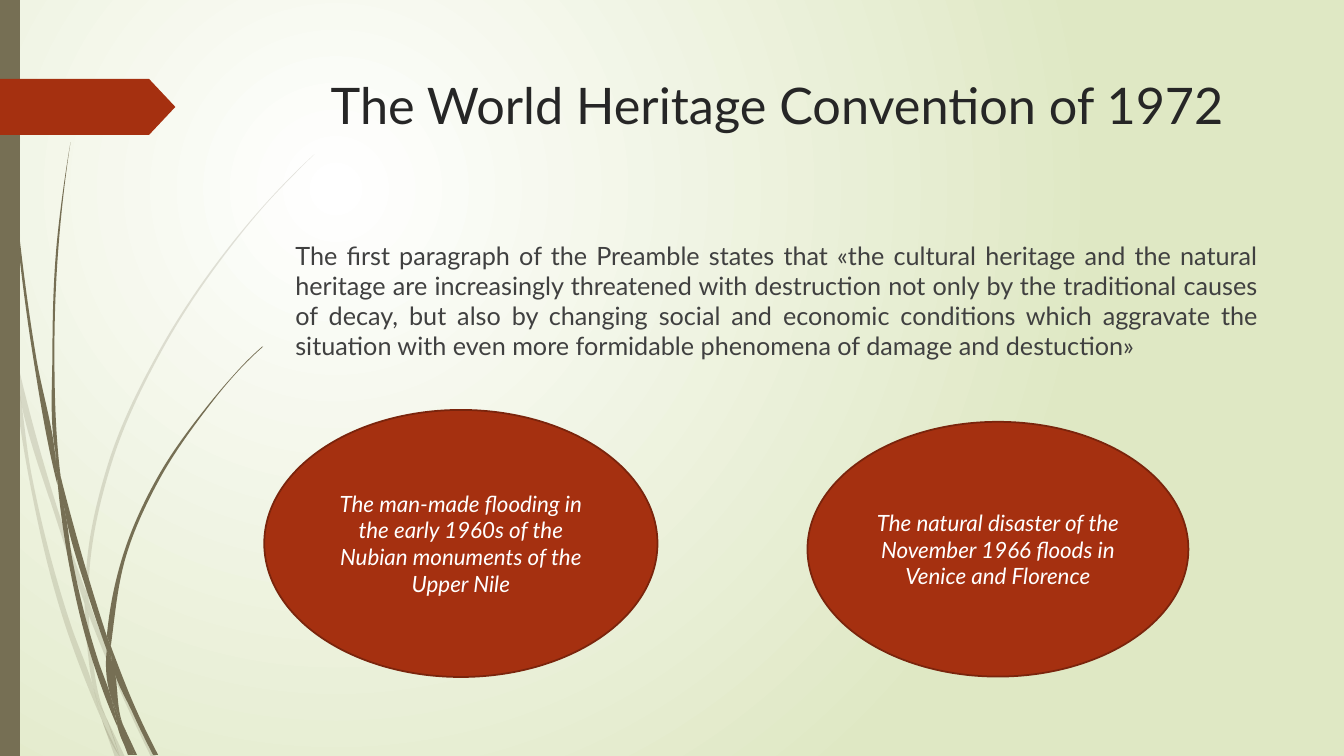
from dataclasses import dataclass
from itertools import pairwise

from lxml.etree import SubElement
from pptx import Presentation
from pptx.dml.color import RGBColor
from pptx.enum.shapes import MSO_SHAPE
from pptx.enum.text import MSO_ANCHOR, MSO_AUTO_SIZE, PP_ALIGN
from pptx.oxml.ns import qn
from pptx.shapes.autoshape import Shape
from pptx.slide import Slide
from pptx.util import Cm, Pt

WHITE = RGBColor(0xFF, 0xFF, 0xFF)
PALE_GREEN = RGBColor(0xDF, 0xE8, 0xC4)
OLIVE = RGBColor(0x76, 0x6F, 0x54)
RUST = RGBColor(0xA5, 0x30, 0x10)
DARK_RUST = RGBColor(0x7A, 0x24, 0x0C)
TITLE_GREY = RGBColor(0x26, 0x26, 0x26)
BODY_GREY = RGBColor(0x40, 0x40, 0x40)
FONT = "Lato"
GRID = Cm(2.54) / 100  # one unit of the blade coordinates

Edge = list[tuple[int, int]]


@dataclass
class Blade:
    """A piece of grass: its left and right edges, both from tip to root."""
    left: Edge
    right: Edge


@dataclass
class Threat:
    text: str
    left: float
    top: float
    width: float
    height: float


FAINT_GRASS = [
    Blade([(0, 299), (10, 344), (11, 350)], [(0, 282), (9, 322), (11, 350)]),
    Blade([(14, 345), (17, 376), (58, 522), (84, 599)], [(14, 345), (62, 520), (85, 586)]),
    Blade([(88, 610), (123, 694), (150, 751)], [(88, 596), (92, 607), (127, 692), (155, 751)]),
    Blade([(105, 711), (119, 751)], [(105, 711), (124, 751)]),
    Blade([(11, 350), (28, 470), (65, 621), (92, 693), (101, 714)],
          [(11, 350), (17, 376), (31, 469), (70, 619), (93, 683), (99, 707), (101, 714)]),
    Blade([(84, 599), (87, 646), (93, 683), (96, 692), (105, 711)],
          [(88, 610), (91, 646), (103, 706), (105, 711)]),
    Blade([(312, 153), (289, 175), (268, 197), (228, 244), (158, 348), (107, 461), (85, 584),
           (85, 586)],
          [(312, 153), (290, 175), (268, 198), (229, 245), (160, 349), (110, 462), (88, 584),
           (88, 596)]),
    Blade([(101, 714), (114, 751)], [(101, 714), (119, 751)]),
    Blade([(85, 586), (84, 599)], [(88, 596), (88, 610)]),
    Blade([(93, 683), (99, 707), (101, 714), (119, 751)],
          [(93, 683), (96, 692), (105, 711), (119, 751)]),
]

DARK_GRASS = [
    Blade([(3, 0), (4, 48), (7, 110), (17, 233), (33, 355), (56, 477), (57, 481)],
          [(4, 0), (5, 48), (8, 109), (19, 232), (36, 355), (55, 453), (57, 481)]),
    Blade([(60, 472), (64, 505), (88, 592), (106, 645)], [(60, 472), (93, 590), (106, 631)]),
    Blade([(110, 641), (111, 656), (132, 708), (152, 749)],
          [(110, 641), (113, 649), (136, 706), (157, 749)]),
    Blade([(57, 477), (68, 557), (93, 659), (111, 708), (117, 722)],
          [(57, 477), (64, 505), (72, 556), (98, 657), (110, 691), (116, 717), (117, 722)]),
    Blade([(70, 141), (62, 193), (56, 245), (52, 349), (55, 449), (60, 472)],
          [(70, 141), (63, 193), (58, 245), (54, 349), (58, 453), (60, 472)]),
    Blade([(122, 719), (133, 749)], [(122, 719), (136, 749)]),
    Blade([(55, 449), (55, 453), (57, 477), (64, 505)], [(55, 449), (60, 472), (64, 505)]),
    Blade([(260, 344), (245, 358), (231, 373), (204, 405), (156, 474), (122, 551), (106, 631)],
          [(261, 344), (245, 359), (231, 374), (205, 406), (158, 476), (125, 552), (111, 633),
           (110, 641)]),
    Blade([(117, 722), (127, 749)], [(117, 722), (131, 749)]),
    Blade([(106, 645), (110, 691), (116, 706), (122, 719)],
          [(106, 645), (109, 651), (111, 656), (121, 716), (122, 719)]),
    Blade([(106, 631), (106, 645)], [(110, 641), (111, 656)]),
    Blade([(110, 691), (116, 717), (117, 722), (130, 749)],
          [(110, 691), (116, 706), (122, 719), (133, 749)]),
]

THREATS = [
    Threat("The man-made flooding in the early 1960s of the Nubian monuments of the Upper Nile",
           6.66, 10.33, 9.91, 6.73),
    Threat("The natural disaster of the November 1966 floods in Venice and Florence",
           20.35, 10.63, 9.6, 6.42),
]


def bezier_segments(edge: Edge) -> list[tuple[complex, complex, complex]]:
    """Two control points and an end point for each step of a smooth curve along the edge."""
    knots = [complex(*point) for point in edge]
    chords = [abs(b - a) for a, b in pairwise(knots)]
    slopes = [(b - a) / abs(b - a) for a, b in pairwise(knots)]
    inner = [(s * d + t * c) / (c + d)
             for (s, t), (c, d) in zip(pairwise(slopes), pairwise(chords))]
    tangents = slopes * 2
    if inner:
        tangents = [2 * slopes[0] - inner[0], *inner, 2 * slopes[-1] - inner[-1]]
    return [(a + s * chord / 3, b - t * chord / 3, b)
            for (a, b), (s, t), chord in zip(pairwise(knots), pairwise(tangents), chords)]


def paint(shape: Shape, color: RGBColor) -> None:
    shape.shadow.inherit = False
    shape.fill.solid()
    shape.fill.fore_color.rgb = color
    shape.line.fill.background()


def write(shape: Shape, text: str, size: int, color: RGBColor, align: PP_ALIGN,
          anchor: MSO_ANCHOR = MSO_ANCHOR.TOP, italic: bool = False) -> None:
    frame = shape.text_frame
    frame.text = text
    frame.word_wrap = True
    frame.auto_size = MSO_AUTO_SIZE.NONE
    frame.vertical_anchor = anchor
    paragraph = frame.paragraphs[0]
    paragraph.alignment = align
    paragraph.space_before = Pt(0)
    properties = paragraph._p.get_or_add_pPr()
    properties.set("marL", "0")
    properties.set("indent", "0")
    SubElement(properties, qn("a:buNone"))
    font = paragraph.runs[0].font
    font.name, font.size, font.italic = FONT, Pt(size), italic
    font.color.rgb = color


def place(shape: Shape, left: float, top: float, width: float, height: float) -> None:
    shape.left, shape.top, shape.width, shape.height = map(Cm, (left, top, width, height))


def paint_background(slide: Slide) -> None:
    fill = slide.background.fill
    fill.gradient()
    for stop, position, color in zip(fill.gradient_stops, (0, 1), (WHITE, PALE_GREEN)):
        stop.position = position
        stop.color.rgb = color
    gradient = slide.element.find(".//" + qn("a:gradFill"))
    gradient.remove(gradient.find(qn("a:lin")))
    circle = SubElement(gradient, qn("a:path"), {"path": "circle"})
    SubElement(circle, qn("a:fillToRect"), l="50000", t="50000", r="100000", b="100000")


def draw_blade(slide: Slide, blade: Blade, opacity: int) -> None:
    """Draw the outline with straight sides, then bend the sides along both edges."""
    back = blade.right[::-1]
    outline = [(x * GRID, y * GRID) for x, y in blade.left + back]
    builder = slide.shapes.build_freeform(*outline[0])
    builder.add_line_segments(outline[1:], close=True)
    grass = builder.convert_to_shape()
    paint(grass, OLIVE)
    if opacity < 100:
        color = grass.element.spPr.find(qn("a:solidFill"))[0]
        SubElement(color, qn("a:alpha"), val=str(opacity * 1000))

    sides = list(grass.element.iter(qn("a:lnTo")))
    del sides[len(blade.left) - 1]  # the root stays straight
    for side, segment in zip(sides, bezier_segments(blade.left) + bezier_segments(back)):
        bend = SubElement(side.getparent(), qn("a:cubicBezTo"))
        for point in segment:
            SubElement(bend, qn("a:pt"), x=str(round(point.real * GRID - grass.left)),
                       y=str(round(point.imag * GRID - grass.top)))
        side.getparent().replace(side, bend)


def draw_threat(slide: Slide, threat: Threat) -> None:
    ellipse = slide.shapes.add_shape(
        MSO_SHAPE.OVAL, *map(Cm, (threat.left, threat.top, threat.width, threat.height)))
    paint(ellipse, RUST)
    ellipse.line.color.rgb = DARK_RUST
    ellipse.line.width = Pt(1.25)
    write(ellipse, threat.text, 16, WHITE, PP_ALIGN.CENTER, MSO_ANCHOR.MIDDLE, italic=True)


def main() -> None:
    deck = Presentation()
    deck.slide_width, deck.slide_height = Cm(33.87), Cm(19.05)
    slide = deck.slides.add_slide(deck.slide_layouts[1])
    paint_background(slide)
    for grass, opacity in ((FAINT_GRASS, 20), (DARK_GRASS, 100)):
        for blade in grass:
            draw_blade(slide, blade, opacity)
    side_bar = slide.shapes.add_shape(MSO_SHAPE.RECTANGLE, 0, 0, Cm(0.5), deck.slide_height)
    paint(side_bar, OLIVE)
    marker = slide.shapes.add_shape(MSO_SHAPE.PENTAGON, 0, Cm(1.99), Cm(4.42), Cm(1.41))
    marker.adjustments[0] = 0.47
    paint(marker, RUST)

    title, preamble = slide.placeholders
    place(title, 7.2, 1.73, 24.77, 3.56)
    write(title, "The World Heritage Convention of 1972", 36, TITLE_GREY, PP_ALIGN.CENTER)
    place(preamble, 7.19, 5.92, 24.77, 10.49)
    write(preamble, "The first paragraph of the Preamble states that «the cultural heritage and the "
          "natural heritage are increasingly threatened with destruction not only by the "
          "traditional causes of decay, but also by changing social and economic conditions "
          "which aggravate the situation with even more formidable phenomena of damage and "
          "destuction»", 18, BODY_GREY, PP_ALIGN.JUSTIFY)
    for threat in THREATS:
        draw_threat(slide, threat)
    deck.save("out.pptx")


if __name__ == "__main__":
    main()
